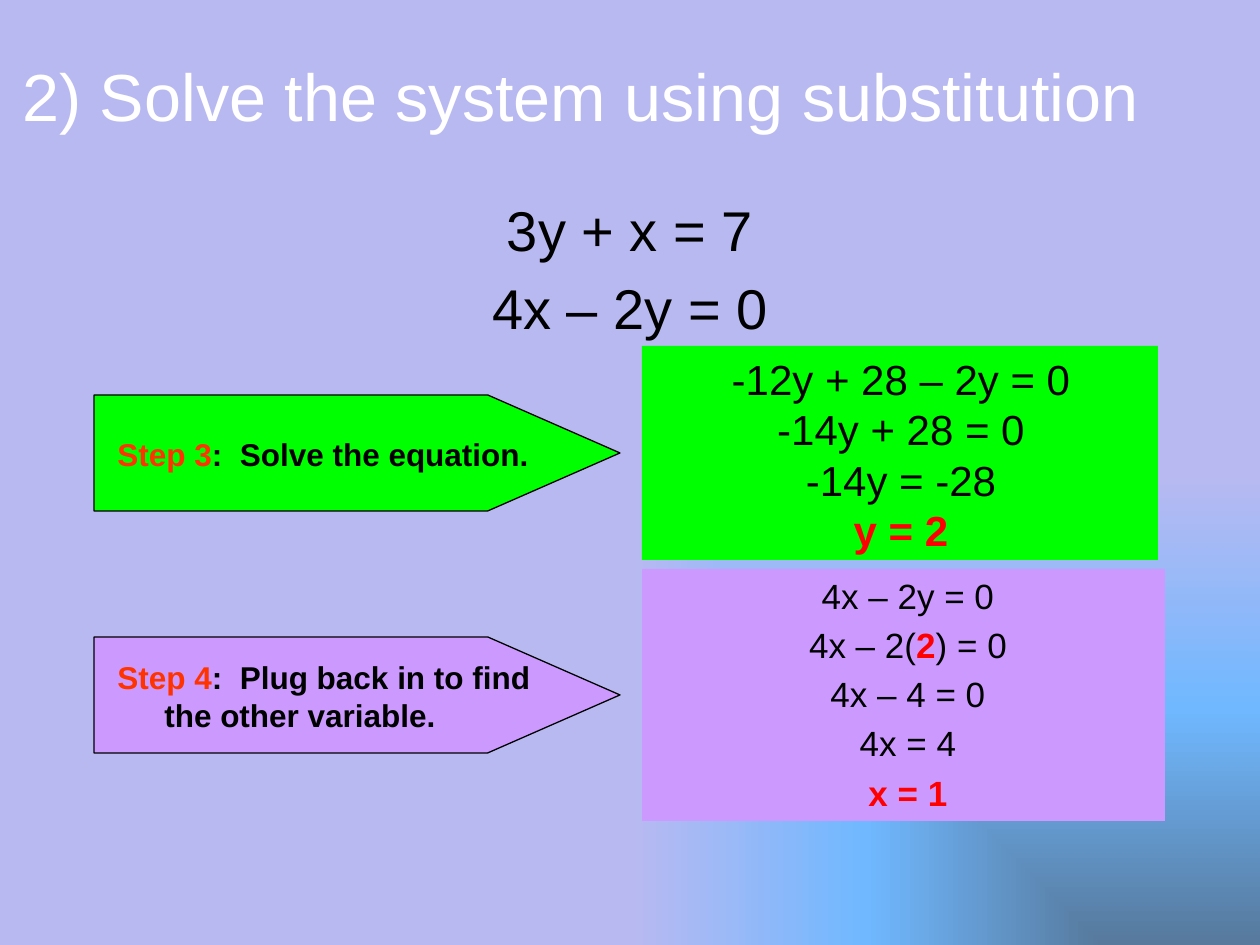
from lxml import etree
from pptx import Presentation
from pptx.dml.color import RGBColor
from pptx.enum.shapes import MSO_SHAPE
from pptx.enum.text import MSO_ANCHOR, PP_ALIGN
from pptx.oxml import parse_xml
from pptx.oxml.ns import qn
from pptx.util import Pt

PENTAGON, RECT = MSO_SHAPE.PENTAGON, MSO_SHAPE.RECTANGLE
TOP, MIDDLE = MSO_ANCHOR.TOP, MSO_ANCHOR.MIDDLE
LEFT, CENTER = PP_ALIGN.LEFT, PP_ALIGN.CENTER
PX = 914400 / 126
THEME = {
    "font": "Arial",
    "white": "FFFFFF", "black": "000000", "red": "FF0000", "orange": "FF3300",
    "green": "00FF00", "purple": "CC99FF",
    "bg": [(0, "56799C"), (50, "70B8FF"), (100, "B9B9F1")],
    "title": 38, "system": 32, "solve": 24, "plug": 20, "step": 18,
}


def add_text(box, lines, size, color="black", align=LEFT, anchor=MIDDLE, hang=0, before=0):
    tf = s.shapes.add_textbox(*[round(v * PX) for v in box]).text_frame
    tf.word_wrap = True
    tf.vertical_anchor = anchor
    for i, line in enumerate(lines):
        p = tf.paragraphs[0] if i == 0 else tf.add_paragraph()
        p.alignment = align
        pPr = p._p.get_or_add_pPr()
        pPr.set("marL", str(round(hang * PX)))
        pPr.set("indent", str(round(-hang * PX)))
        if before:
            spacing = etree.SubElement(pPr, qn("a:spcBef"))
            etree.SubElement(spacing, qn("a:spcPct")).set("val", str(before * 1000))
        for text, run_color, bold in [(line, color, False)] if isinstance(line, str) else line:
            r = p.add_run()
            r.text = text
            r.font.name = THEME["font"]
            r.font.size = Pt(THEME[size])
            r.font.bold = bold
            r.font.color.rgb = RGBColor.from_string(THEME[run_color])


def add_panel(kind, box, fill, outlined=False):
    sp = s.shapes.add_shape(kind, *[round(v * PX) for v in box])
    sp.shadow.inherit = False
    sp.fill.solid()
    sp.fill.fore_color.rgb = RGBColor.from_string(THEME[fill])
    if outlined:
        sp.line.color.rgb = RGBColor.from_string(THEME["black"])
        sp.line.width = Pt(0.75)
    else:
        sp.line.fill.background()
    return sp


prs = Presentation()
prs.slide_width, prs.slide_height = round(1260 * PX), round(945 * PX)
s = prs.slides.add_slide(prs.slide_layouts[6])

s.background.fill.solid()
solid = s._element.find(".//" + qn("p:bgPr")).find(qn("a:solidFill"))
stops = "".join(f'<a:gs pos="{pos * 1000}"><a:srgbClr val="{color}"/></a:gs>'
                for pos, color in THEME["bg"])
solid.getparent().replace(solid, parse_xml(
    '<a:gradFill xmlns:a="http://schemas.openxmlformats.org/drawingml/2006/main" rotWithShape="1">'
    f'<a:gsLst>{stops}</a:gsLst>'
    '<a:path path="rect"><a:fillToRect l="100000" t="100000"/></a:path></a:gradFill>'))

add_text((10, 32, 1144, 126), ["2) Solve the system using substitution"], "title", color="white")
add_text((84, 189, 1092, 640), ["3y + x = 7", "4x – 2y = 0"], "system",
         align=CENTER, anchor=TOP, hang=47, before=20)

steps = [
    dict(top=637, fill="purple", label="Step 4",
         action=":  Plug back in to find the other variable.",
         panel=(642, 569, 523, 252), box=(651, 568, 514, 252), size="plug", hang=84, before=20,
         work=["4x – 2y = 0",
               [("4x – 2(", "black", False), ("2", "red", True), (") = 0", "black", False)],
               "4x – 4 = 0", "4x = 4", [("x = 1", "red", True)]]),
    dict(top=395, fill="green", label="Step 3", action=":  Solve the equation.",
         panel=(642, 346, 516, 214), box=(651, 349, 500, 210), size="solve", hang=47, before=0,
         work=["-12y + 28 – 2y = 0", "-14y + 28 = 0", "-14y = -28", [("y = 2", "red", True)]]),
]
for step in steps:
    arrow = add_panel(PENTAGON, (94, step["top"], 526, 116), step["fill"], outlined=True)
    arrow.adjustments[0] = 1.14
    add_text((105, step["top"] + 11, 451, 95),
             [[(step["label"], "orange", True), (step["action"], "black", True)]], "step", hang=47)
    add_panel(RECT, step["panel"], step["fill"])
    add_text(step["box"], step["work"], step["size"], align=CENTER,
             hang=step["hang"], before=step["before"])

prs.save("out.pptx")
